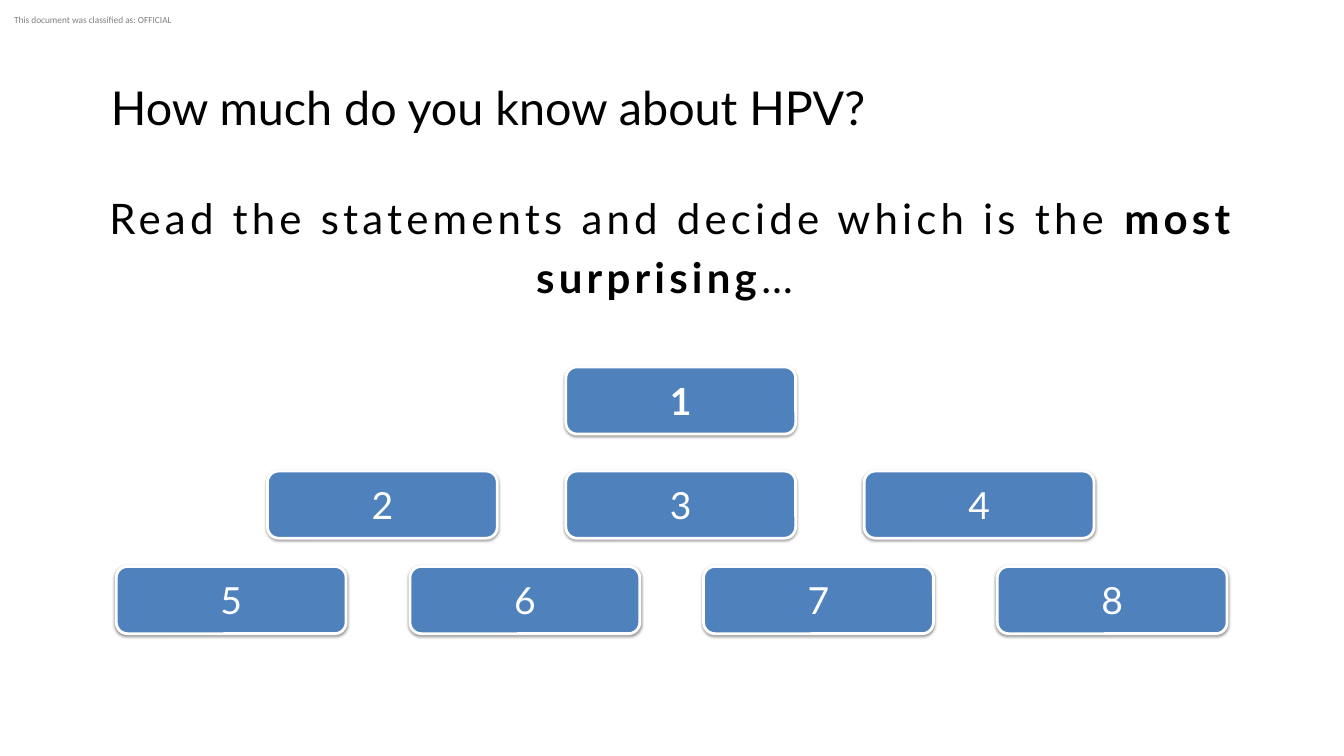
from lxml import etree
from pptx import Presentation
from pptx import util as u
from pptx.dml import color
from pptx.enum import shapes, text
from pptx.oxml import ns


def rgb(value):
    return color.RGBColor.from_string(value)


def add_element(parent, tag, **attributes):
    return etree.SubElement(parent, ns.qn(tag), attributes)


class SlideBuilder:
    font = "Lato"
    ink = "000000"
    fill = "4F81BD"
    light = "FFFFFF"
    card_width = 3.42
    card_height = 1

    def __init__(self, slide):
        self.slide = slide

    def run(self, paragraph, content, size, hue, bold=False, font=None, tracking=0, opacity=100):
        run = paragraph.add_run()
        run.text = content
        run.font.name = font or self.font
        run.font.size = u.Pt(size)
        run.font.bold = bold
        run.font.color.rgb = rgb(hue)
        properties = run.font._element
        if tracking:
            properties.set("spc", str(int(tracking * 100)))
        if opacity < 100:
            hue_element = properties.find(".//" + ns.qn("a:srgbClr"))
            add_element(hue_element, "a:alpha", val=str(opacity * 1000))

    def text_box(self, left, top, width, height, runs, size, spacing=None, centred=False, **style):
        box = self.slide.shapes.add_textbox(*map(u.Inches, (left, top, width, height)))
        frame = box.text_frame
        frame.word_wrap = True
        frame.margin_left = frame.margin_right = 0
        frame.margin_top = frame.margin_bottom = 0
        paragraph = frame.paragraphs[0]
        if spacing:
            paragraph.line_spacing = u.Pt(spacing)
        if centred:
            paragraph.alignment = text.PP_ALIGN.CENTER
        for content, bold in runs:
            self.run(paragraph, content, size, self.ink, bold, **style)

    def card(self, left, top, label, bold=False):
        shape = self.slide.shapes.add_shape(
            shapes.MSO_SHAPE.ROUNDED_RECTANGLE,
            *map(u.Inches, (left, top, self.card_width, self.card_height)))
        shape.fill.solid()
        shape.fill.fore_color.rgb = rgb(self.fill)
        shape.line.color.rgb = rgb(self.light)
        shape.line.width = u.Pt(3)
        self.shadow(shape)
        frame = shape.text_frame
        frame.vertical_anchor = text.MSO_ANCHOR.MIDDLE
        paragraph = frame.paragraphs[0]
        paragraph.alignment = text.PP_ALIGN.CENTER
        self.run(paragraph, label, 40, self.light, bold)

    def shadow(self, shape):
        shape.shadow.inherit = False
        effects = shape._element.spPr.find(ns.qn("a:effectLst"))
        outer = add_element(effects, "a:outerShdw", blurRad=str(u.Pt(3.1)),
                            dist=str(u.Pt(1.6)), dir="5400000", rotWithShape="0")
        hue = add_element(outer, "a:srgbClr", val=self.ink)
        add_element(hue, "a:alpha", val="38000")

    def card_row(self, left, top, pitch, labels, bold=False):
        for index, label in enumerate(labels):
            self.card(left + index * pitch, top, label, bold)


def main():
    presentation = Presentation()
    presentation.slide_width = u.Inches(20)
    presentation.slide_height = u.Inches(11.25)
    slide = presentation.slides.add_slide(presentation.slide_layouts[6])
    builder = SlideBuilder(slide)

    builder.text_box(0.21, 0.21, 2.38, 0.17,
                     [("This document was classified as: OFFICIAL", False)],
                     10, font="Calibri", opacity=50)
    builder.text_box(1.65, 1.04, 12.87, 0.94,
                     [("How much do you know about HPV?", False)], 50, spacing=70)
    builder.text_box(0.9, 2.74, 18.2, 1.72,
                     [("Read the statements and decide which is the ", False),
                      ("most surprising", True), ("… ", False)],
                     45, spacing=63, centred=True, tracking=4.5)

    builder.card_row(8.42, 5.46, 0, "1", bold=True)
    builder.card_row(3.98, 7.01, 4.44, "234")
    builder.card_row(1.73, 8.43, 4.37, "5678")

    presentation.save("out.pptx")


if __name__ == "__main__":
    main()
